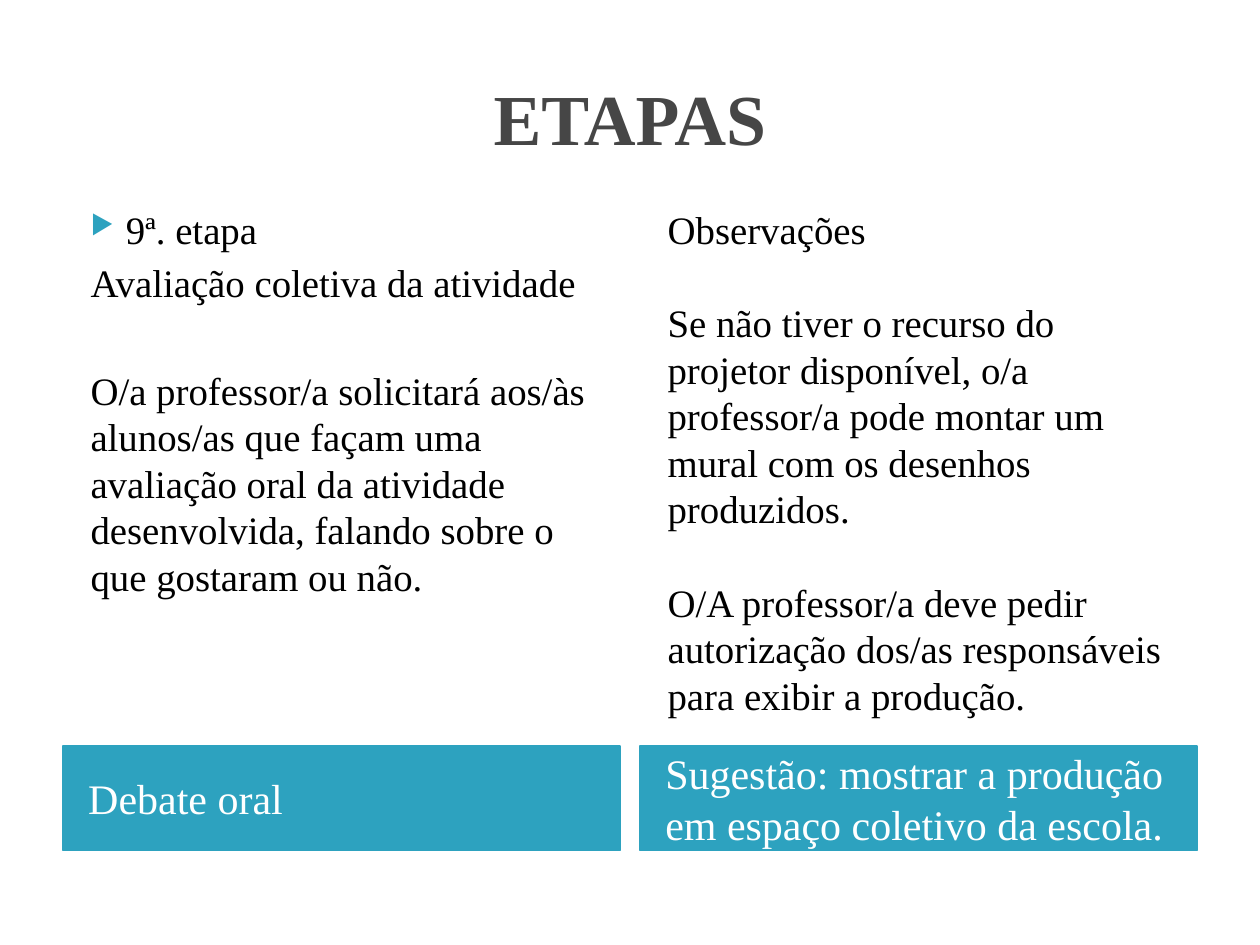
from lxml import etree
from pptx import Presentation
from pptx.dml.color import RGBColor
from pptx.enum.shapes import MSO_SHAPE
from pptx.enum.text import MSO_ANCHOR, PP_ALIGN
from pptx.oxml.ns import qn
from pptx.util import Pt

PX = 9144  # one px is 0.01 inch
FONT = "Times New Roman"
TEAL = RGBColor(0x2D, 0xA2, 0xBF)
GRAY = RGBColor(0x46, 0x46, 0x46)
BLACK = RGBColor(0, 0, 0)
WHITE = RGBColor(255, 255, 255)
RECT = MSO_SHAPE.RECTANGLE
MIDDLE, TOP = MSO_ANCHOR.MIDDLE, MSO_ANCHOR.TOP
LEFT, CENTER = PP_ALIGN.LEFT, PP_ALIGN.CENTER

COL_X = (50, 508)
COL_W = 442
NOTES = (
    # (text, points before, bullet)
    (
        ("9ª. etapa", 0, True),
        ("Avaliação coletiva da atividade", 4, False),
        ("O/a professor/a solicitará aos/às alunos/as que façam uma "
         "avaliação oral da atividade desenvolvida, falando sobre o "
         "que gostaram ou não.", 34.7, False),
    ),
    (
        ("Observações", 0, False),
        ("Se não tiver o recurso do projetor disponível, o/a professor/a "
         "pode montar um mural com os desenhos produzidos.", 26.7, False),
        ("O/A professor/a deve pedir autorização dos/as responsáveis "
         "para exibir a produção.", 26.7, False),
    ),
)
BARS = (
    "Debate oral",
    "Sugestão: mostrar a produção em espaço coletivo da escola.",
)


def box(*px):
    return [n * PX for n in px]


def add_run(para, text, size, color, bold=False):
    run = para.add_run()
    run.text = text
    font = run.font
    font.name, font.size, font.bold = FONT, Pt(size), bold
    font.color.rgb = color


def set_indent(para, left, first):
    props = para._p.get_or_add_pPr()
    props.set("marL", str(left * PX))
    props.set("indent", str(first * PX))
    return props


def add_bullet(props):
    color = etree.SubElement(props, qn("a:buClr"))
    etree.SubElement(color, qn("a:srgbClr"), val=str(TEAL))
    etree.SubElement(props, qn("a:buSzPct"), val="68000")
    etree.SubElement(props, qn("a:buChar"), char="▶")


def add_title(slide, text):
    title = slide.shapes.title
    title.left, title.top, title.width, title.height = box(50, 30, 900, 125)
    frame = title.text_frame
    frame.vertical_anchor = MIDDLE
    para = frame.paragraphs[0]
    para.alignment = CENTER
    add_run(para, text, 41, GRAY, True)


def add_notes(slide, left, items):
    area = slide.shapes.add_textbox(*box(left, 158, COL_W, 431))
    frame = area.text_frame
    frame.word_wrap = True
    frame.vertical_anchor = TOP
    for i, (text, gap, bullet) in enumerate(items):
        para = frame.add_paragraph() if i else frame.paragraphs[0]
        if gap:
            para.space_before = Pt(gap)
        if bullet:
            add_bullet(set_indent(para, 40, -28))
        else:
            set_indent(para, 12, 0)
        add_run(para, text, 22.2, BLACK)


def add_bar(slide, left, text):
    bar = slide.shapes.add_shape(RECT, *box(left, 592, COL_W, 83))
    bar.shadow.inherit = False
    bar.fill.solid()
    bar.fill.fore_color.rgb = TEAL
    bar.line.color.rgb = TEAL
    bar.line.width = Pt(0.75)
    frame = bar.text_frame
    frame.word_wrap = True
    frame.vertical_anchor = MIDDLE
    frame.margin_left = 20 * PX
    para = frame.paragraphs[0]
    para.alignment = LEFT
    add_run(para, text, 24, WHITE)


def main():
    deck = Presentation()
    deck.slide_width, deck.slide_height = box(1000, 750)
    slide = deck.slides.add_slide(deck.slide_layouts[5])
    add_title(slide, "ETAPAS")
    # Coloured bars below, notes above, one of each per column
    for left, text in zip(COL_X, BARS):
        add_bar(slide, left, text)
    for left, items in zip(COL_X, NOTES):
        add_notes(slide, left, items)
    deck.save("out.pptx")


if __name__ == "__main__":
    main()
